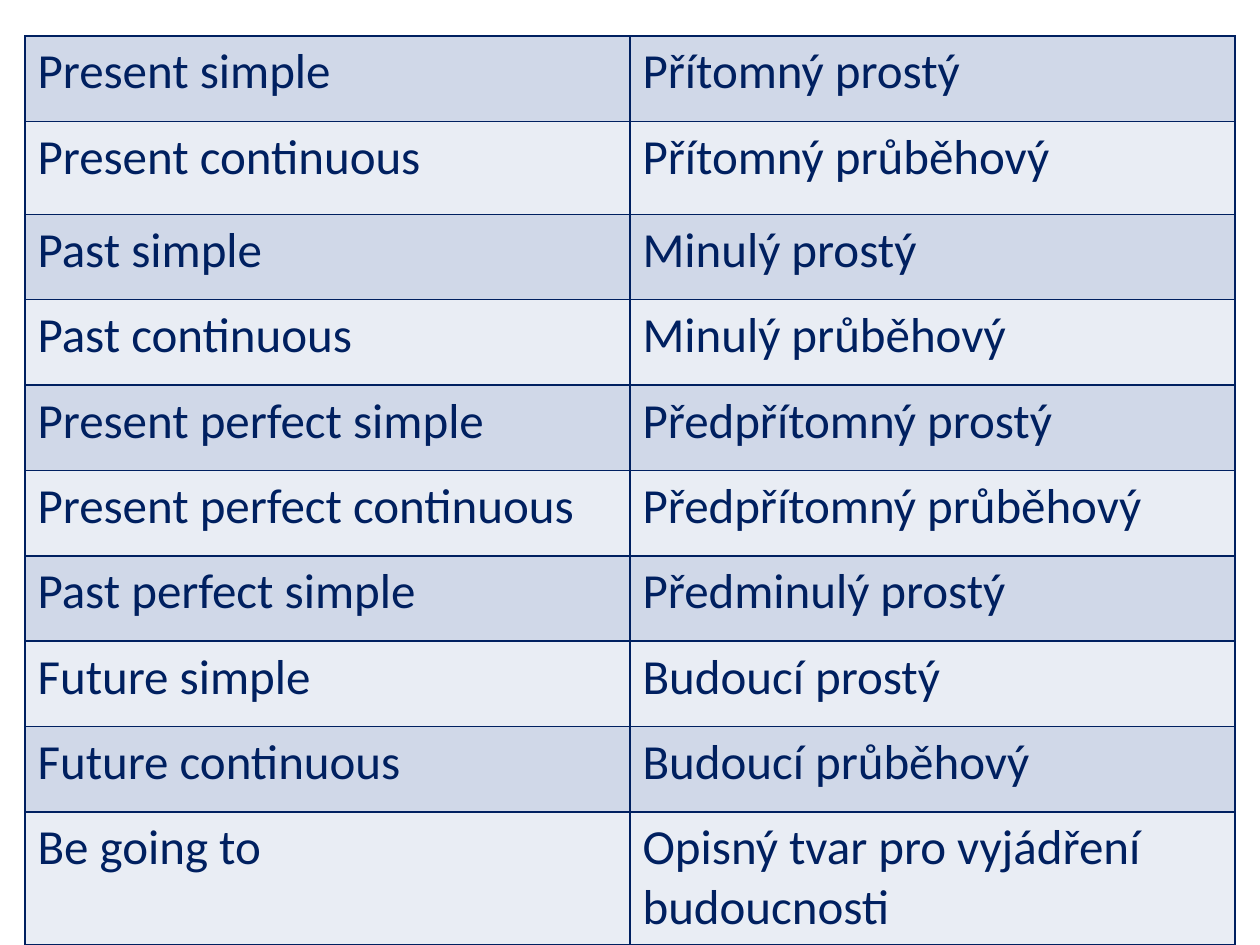
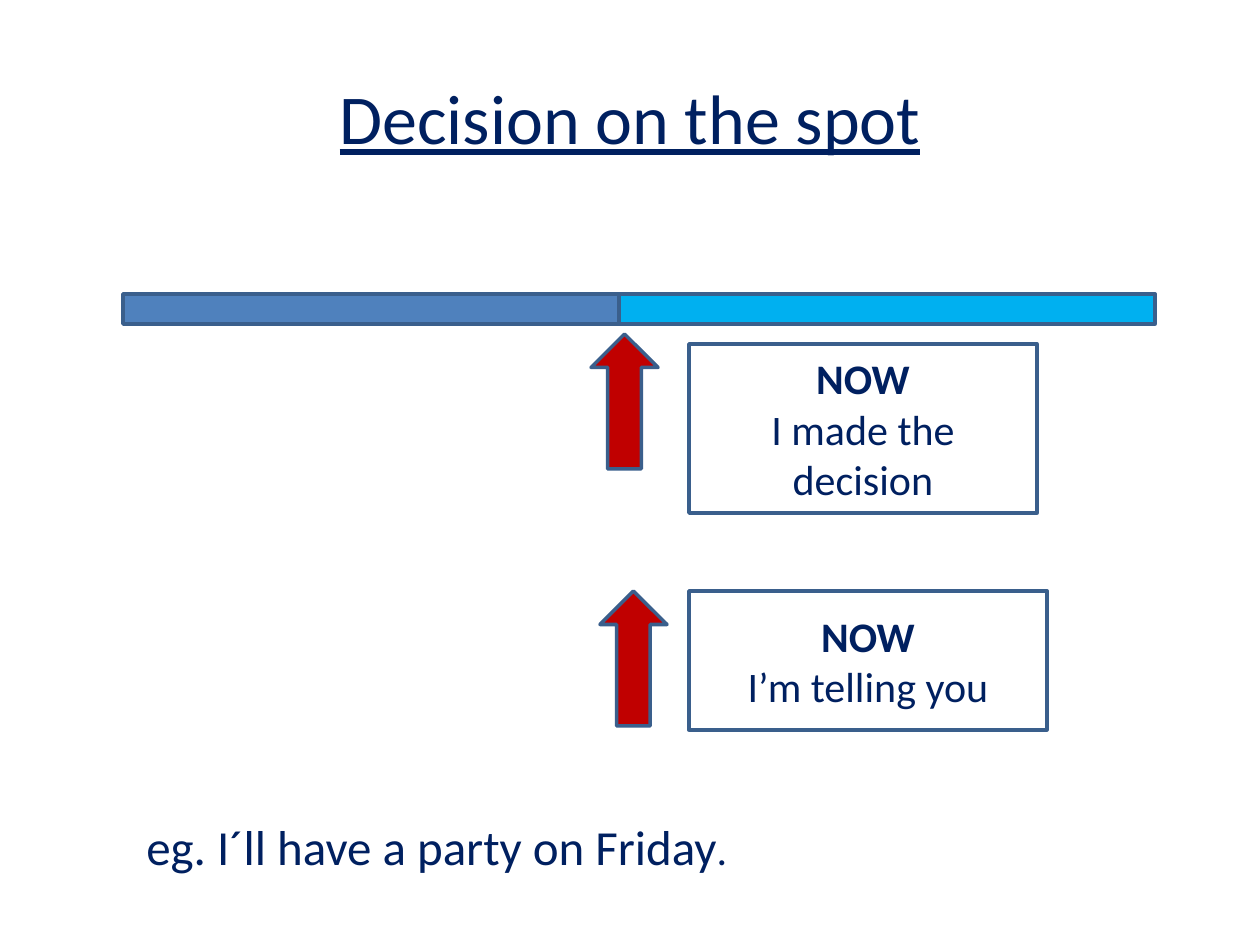
from lxml import etree
from pptx import Presentation
from pptx import util as u
from pptx.dml.color import RGBColor
from pptx.enum import shapes, text
from pptx.oxml.ns import qn

# Content
TENSES = [
    ("Present simple", "Přítomný prostý"),
    ("Present continuous", "Přítomný průběhový"),
    ("Past simple", "Minulý prostý"),
    ("Past continuous", "Minulý průběhový"),
    ("Present perfect simple", "Předpřítomný prostý"),
    ("Present perfect continuous", "Předpřítomný průběhový"),
    ("Past perfect simple", "Předminulý prostý"),
    ("Future simple", "Budoucí prostý"),
    ("Future continuous", "Budoucí průběhový"),
    ("Be going to", "Opisný tvar pro vyjádření budoucnosti"),
]
HEADING = "Decision on the spot"
MOMENTS = [  # arrow (left, top), box (left, top, width, height), what happens now
    ((591, 334), (689, 344, 348, 169), "I made the decision"),
    ((600, 591), (689, 591, 358, 139), "I’m telling you"),
]
EXAMPLE = [("eg. I´ll have a party on Friday", 28), (".", 24)]

# Shared look
NAVY = RGBColor(0x00, 0x20, 0x60)
OUTLINE = RGBColor(0x3A, 0x5F, 0x8C)
PAST_BLUE = RGBColor(0x4F, 0x81, 0xBD)
FUTURE_BLUE = RGBColor(0x00, 0xB0, 0xF0)
ARROW_RED = RGBColor(0xC0, 0x00, 0x00)
WHITE = RGBColor(0xFF, 0xFF, 0xFF)
ROW_BANDS = (RGBColor(0xD0, 0xD8, 0xE8), RGBColor(0xE9, 0xED, 0xF4))
FONT = "Calibri"
RECT = shapes.MSO_SHAPE.RECTANGLE
UP_ARROW = shapes.MSO_SHAPE.UP_ARROW

# Geometry in px
PX_PER_INCH = 126
SLIDE_SIZE = (1260, 945)
TABLE_CORNER, COLUMN = (25, 36), 605
EIGHT_ROWS, TALL_ROW, LAST_ROW = 683, 93, 132
TITLE_PLACE = (63, 38, 1134, 158)
TIMELINE_LEFT, TIMELINE_TOP, TIMELINE_HEIGHT = 123, 294, 30
PERIODS = [(496, PAST_BLUE), (536, FUTURE_BLUE)]
ARROW_SIZE = (67, 135)
EXAMPLE_PLACE = (134, 810, 1032, 72)


def px(length):
    return u.Emu(round(length * u.Inches(1) / PX_PER_INCH))


def place(*lengths):
    return [px(length) for length in lengths]


def write(paragraph, words, size, **extra):
    run = paragraph.add_run()
    run.text = words
    run.font.color.rgb = NAVY
    for key, value in {"name": FONT, "size": u.Pt(size), **extra}.items():
        setattr(run.font, key, value)


def add_block(slide, kind, at, fill):
    block = slide.shapes.add_shape(kind, *place(*at))
    block.shadow.inherit = False
    block.fill.solid()
    block.fill.fore_color.rgb = fill
    block.line.color.rgb = OUTLINE
    block.line.width = u.Pt(2)
    return block


def border_cell(cell):
    properties = cell._tc.get_or_add_tcPr()
    for index, side in enumerate(("a:lnL", "a:lnR", "a:lnT", "a:lnB")):
        edge = etree.Element(qn(side), w=str(u.Pt(1)))
        solid = etree.SubElement(edge, qn("a:solidFill"))
        etree.SubElement(solid, qn("a:srgbClr"), val=str(NAVY))
        properties.insert(index, edge)


def build_tenses(deck):
    slide = deck.slides.add_slide(deck.slide_layouts[6])
    heights = [px(EIGHT_ROWS) // 8] * len(TENSES)
    heights[1], heights[-1] = place(TALL_ROW, LAST_ROW)
    table = slide.shapes.add_table(
        len(TENSES), 2, *place(*TABLE_CORNER, 2 * COLUMN), sum(heights)).table
    table.first_row = False
    for column in table.columns:
        column.width = px(COLUMN)
    for r, names in enumerate(TENSES):
        table.rows[r].height = heights[r]
        for c, name in enumerate(names):
            cell = table.cell(r, c)
            cell.fill.solid()
            cell.fill.fore_color.rgb = ROW_BANDS[r % 2]
            border_cell(cell)
            write(cell.text_frame.paragraphs[0], name, 28)


def build_decision(deck):
    slide = deck.slides.add_slide(deck.slide_layouts[5])

    # Title
    title = slide.shapes.title
    title.left, title.top, title.width, title.height = place(*TITLE_PLACE)
    title.text_frame.vertical_anchor = text.MSO_ANCHOR.MIDDLE
    heading = title.text_frame.paragraphs[0]
    heading.alignment = text.PP_ALIGN.CENTER
    write(heading, HEADING, 40, underline=True)

    # Timeline: past, then future
    left = TIMELINE_LEFT
    for width, color in PERIODS:
        add_block(slide, RECT, (left, TIMELINE_TOP, width, TIMELINE_HEIGHT), color)
        left += width

    # Moments: arrow and explanation
    for arrow_corner, box_place, event in MOMENTS:
        add_block(slide, UP_ARROW, (*arrow_corner, *ARROW_SIZE), ARROW_RED)
        frame = add_block(slide, RECT, box_place, WHITE).text_frame
        frame.word_wrap = True
        frame.vertical_anchor = text.MSO_ANCHOR.MIDDLE
        now, happening = frame.paragraphs[0], frame.add_paragraph()
        for line, words, bold in ((now, "NOW", True), (happening, event, False)):
            line.alignment = text.PP_ALIGN.CENTER
            write(line, words, 24, bold=bold)

    # Example sentence
    frame = slide.shapes.add_textbox(*place(*EXAMPLE_PLACE)).text_frame
    frame.word_wrap = True
    frame.auto_size = text.MSO_AUTO_SIZE.SHAPE_TO_FIT_TEXT
    for words, size in EXAMPLE:
        write(frame.paragraphs[0], words, size)


def main():
    deck = Presentation()
    deck.slide_width, deck.slide_height = place(*SLIDE_SIZE)
    build_tenses(deck)
    build_decision(deck)
    deck.save("out.pptx")


if __name__ == "__main__":
    main()
